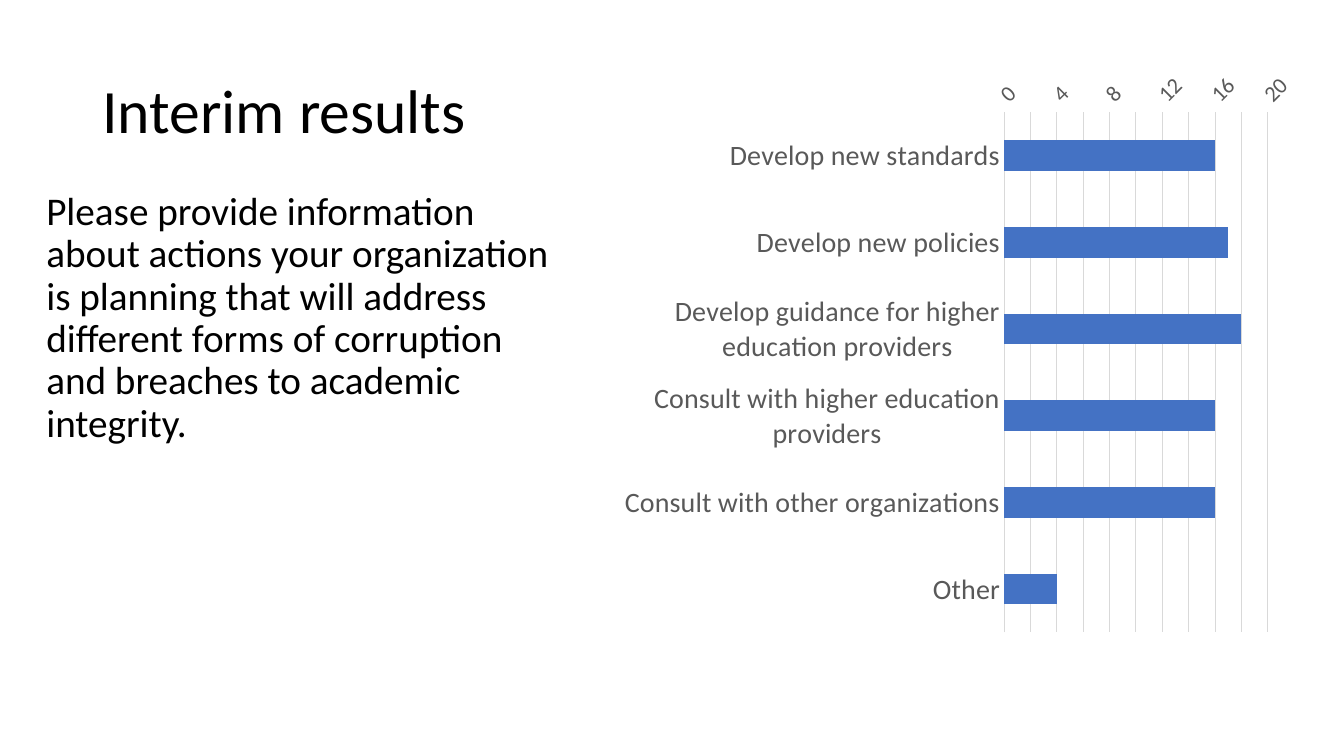
"""Build the interim results slide with a question and a bar chart."""
from pptx import Presentation
from pptx.chart.data import CategoryChartData
from pptx.dml.color import RGBColor
from pptx.enum.chart import XL_CHART_TYPE, XL_TICK_MARK
from pptx.enum.text import MSO_ANCHOR, MSO_AUTO_SIZE, PP_ALIGN
from pptx.util import Pt

BAR = XL_CHART_TYPE.BAR_CLUSTERED
NO_TICK = XL_TICK_MARK.NONE
TOP, MIDDLE = MSO_ANCHOR.TOP, MSO_ANCHOR.MIDDLE
NO_FIT = MSO_AUTO_SIZE.NONE
LEFT = PP_ALIGN.LEFT

FONT = "Calibri"
COLORS = {"text": "000000", "label": "595959", "grid": "D9D9D9", "bar": "4472C4"}
QUESTION = (
    "Please provide information about actions your organization is planning "
    "that will address different forms of corruption and breaches to academic integrity."
)
ACTIONS = {
    "Develop new standards": 16,
    "Develop new policies": 17,
    "Develop guidance for higher education providers": 18,
    "Consult with higher education providers": 16,
    "Consult with other organizations": 16,
    "Other": 4,
}


def color(name):
    """Return the named colour."""
    return RGBColor.from_string(COLORS[name])


def set_values(target, values):
    """Set each attribute of the target from a dict."""
    for name, value in values.items():
        setattr(target, name, value)


def format_font(font, size, color_name):
    """Apply the slide font in a size and colour."""
    set_values(font, {"name": FONT, "size": Pt(size), "bold": False})
    font.color.rgb = color(color_name)


def format_line(line, color_name):
    """Draw a thin line in a colour."""
    line.width = Pt(0.75)
    line.color.rgb = color(color_name)


def fill_text(shape, box, text, size, anchor):
    """Place a shape and write one paragraph in it."""
    set_values(shape, dict(zip(("left", "top", "width", "height"), map(Pt, box))))
    frame = shape.text_frame
    set_values(frame, {"text": text, "word_wrap": True, "auto_size": NO_FIT,
                       "vertical_anchor": anchor})
    paragraph = frame.paragraphs[0]
    set_values(paragraph, {"alignment": LEFT, "line_spacing": 0.9})
    format_font(paragraph.font, size, "text")


def format_axes(chart):
    """Style the reversed category axis and the value axis."""
    actions, counts = chart.category_axis, chart.value_axis
    set_values(actions, {"reverse_order": True, "major_tick_mark": NO_TICK,
                         "minor_tick_mark": NO_TICK})
    set_values(counts, {"minimum_scale": 0, "maximum_scale": 20, "major_unit": 2,
                        "major_tick_mark": NO_TICK, "minor_tick_mark": NO_TICK,
                        "has_major_gridlines": True})
    format_font(actions.tick_labels.font, 20, "label")
    format_font(counts.tick_labels.font, 16, "label")
    format_line(actions.format.line, "grid")
    format_line(counts.major_gridlines.format.line, "grid")
    counts.format.line.fill.background()
    counts._element.txPr.bodyPr.set("rot", "-2700000")


def add_action_chart(slide, box):
    """Add the bar chart of planned actions."""
    data = CategoryChartData()
    data.categories = list(ACTIONS)
    data.add_series("Series 1", list(ACTIONS.values()))
    chart = slide.shapes.add_chart(BAR, *map(Pt, box), data).chart
    set_values(chart, {"has_legend": False, "has_title": False})
    format_font(chart.font, 10, "text")
    plot = chart.plots[0]
    set_values(plot, {"gap_width": 182, "vary_by_categories": False})
    fill = plot.series[0].format.fill
    fill.solid()
    fill.fore_color.rgb = color("bar")
    format_axes(chart)


def main():
    """Build and save the slide."""
    presentation = Presentation()
    set_values(presentation, {"slide_width": Pt(960), "slide_height": Pt(540)})
    slide = presentation.slides.add_slide(presentation.slide_layouts[5])
    fill_text(slide.shapes.title, (66, 28.8, 284.4, 104.4), "Interim results", 44, MIDDLE)
    question = slide.shapes.add_textbox(0, 0, 0, 0)
    fill_text(question, (26, 133.2, 376.6, 207.4), QUESTION, 28, TOP)
    add_action_chart(slide, (436.3, 43.9, 497.5, 416.2))
    presentation.save("out.pptx")


if __name__ == "__main__":
    main()
